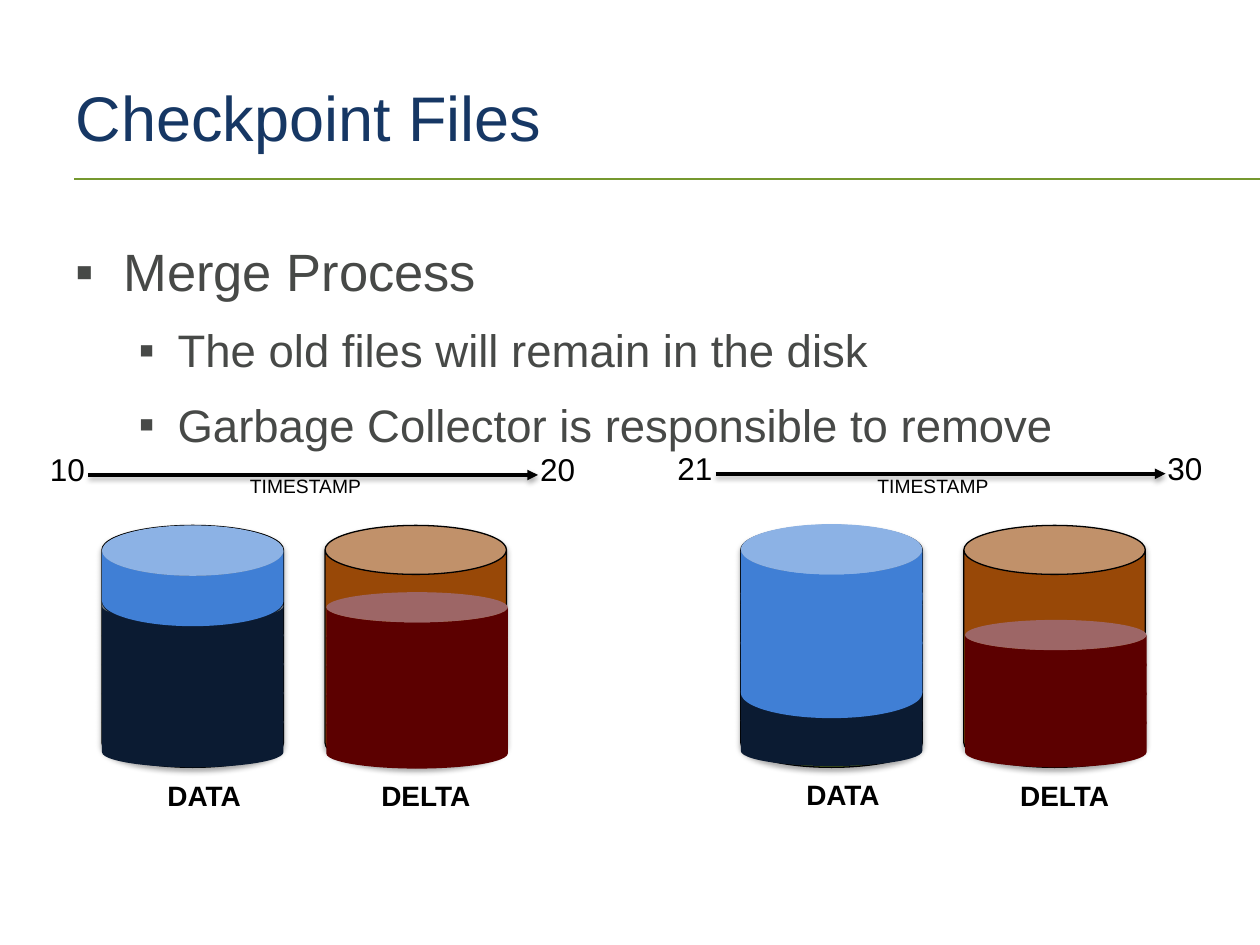
from lxml import etree
from pptx import Presentation
from pptx.dml.color import RGBColor
from pptx.enum.shapes import MSO_CONNECTOR, MSO_SHAPE
from pptx.enum.text import MSO_ANCHOR, MSO_AUTO_SIZE, PP_ALIGN
from pptx.oxml.ns import qn
from pptx.util import Inches, Pt

CAN = MSO_SHAPE.CAN
STRAIGHT = MSO_CONNECTOR.STRAIGHT
LEFT, CENTER = PP_ALIGN.LEFT, PP_ALIGN.CENTER
TOP, MIDDLE = MSO_ANCHOR.TOP, MSO_ANCHOR.MIDDLE
GROW = MSO_AUTO_SIZE.SHAPE_TO_FIT_TEXT

THEME = {
    "font": "Arial",
    "color": {name: RGBColor.from_string(value) for name, value in {
        "title": "163764", "body": "474947", "rule": "75982F", "black": "000000",
        "data_can": "587223", "delta_can": "984807",
        "data_rows": "0B1B32", "delta_rows": "5C0000", "deleted": "407FD5",
    }.items()},
    "size": {"title": Pt(36), "body": (Pt(30), Pt(26)), "file": Pt(16),
             "stamp": Pt(18), "axis": Pt(11)},
}
COLOR, SIZE = THEME["color"], THEME["size"]

LABEL_FRAME = {
    "margin_left": Inches(0.24), "margin_right": Inches(0.24),
    "margin_top": Inches(0.19), "margin_bottom": Inches(0.19),
    "auto_size": GROW,
}
LABEL_PARAGRAPH = {"alignment": CENTER, "line_spacing": 0.9, "space_after": Pt(7.3)}


def add_label(shapes, text, left, top, width, height, size, bold=False, wrap=True):
    label = shapes.add_textbox(Inches(left), Inches(top), Inches(width), Inches(height))
    frame = label.text_frame
    paragraph = frame.paragraphs[0]
    paragraph.text = text
    font_format = {"name": THEME["font"], "size": size, "bold": bold}
    for target, values in ((frame, LABEL_FRAME), (paragraph, LABEL_PARAGRAPH),
                           (paragraph.font, font_format)):
        for attribute, value in values.items():
            setattr(target, attribute, value)
    frame.word_wrap = wrap
    paragraph.font.color.rgb = COLOR["black"]


def add_can(shapes, left, top, height, color, curve=0.5, outlined=False):
    can = shapes.add_shape(CAN, Inches(left), Inches(top), Inches(1.44), Inches(height))
    can.adjustments[0] = curve
    can.shadow.inherit = False
    can.fill.solid()
    can.fill.fore_color.rgb = color
    if outlined:
        can.line.color.rgb = COLOR["black"]
        can.line.width = Pt(0.75)
    else:
        can.line.fill.background()
    return can


presentation = Presentation()
presentation.slide_width, presentation.slide_height = Inches(10), Inches(7.5)
slide = presentation.slides.add_slide(presentation.slide_layouts[1])

# Rule under the title
rule = slide.shapes.add_connector(STRAIGHT, Inches(0.59), Inches(1.42), Inches(10), Inches(1.42))
rule.line.color.rgb = COLOR["rule"]
rule.line.width = Pt(1)
etree.SubElement(rule.element.spPr, qn("a:effectLst"))

# Title and bullet list
title, body = slide.shapes.title, slide.placeholders[1]
for holder, top, height, anchor in ((title, 0.3, 1.25, MIDDLE), (body, 1.75, 4.95, TOP)):
    holder.left, holder.top = Inches(0.5), Inches(top)
    holder.width, holder.height = Inches(9), Inches(height)
    holder.text_frame.vertical_anchor = anchor

title.text_frame.text = "Checkpoint Files"
heading = title.text_frame.paragraphs[0]
heading.alignment = LEFT
for attribute, value in {"name": THEME["font"], "size": SIZE["title"]}.items():
    setattr(heading.font, attribute, value)
heading.font.color.rgb = COLOR["title"]

merge_points = [
    (0, "Merge Process"),
    (1, "The old files will remain in the disk"),
    (1, "Garbage Collector is responsible to remove"),
]
indents = [(0.38, -0.38), (0.81, -0.31)]
body.text_frame.text = "\n".join(text for _, text in merge_points)
for point, (level, _) in zip(body.text_frame.paragraphs, merge_points):
    margin, hanging = indents[level]
    properties = point._p.get_or_add_pPr()
    properties.set("marL", str(Inches(margin)))
    properties.set("indent", str(Inches(hanging)))
    etree.SubElement(properties, qn("a:buFont"), typeface=THEME["font"])
    etree.SubElement(properties, qn("a:buChar"), char="▪")
    point.level = level
    point.line_spacing = 1.2
    for attribute, value in {"name": THEME["font"], "size": SIZE["body"][level]}.items():
        setattr(point.font, attribute, value)
    point.font.color.rgb = COLOR["body"]

# Two checkpoint file pairs: a data can and a delta can under a timestamp range
file_pairs = [
    {"left": 0.81, "arrow": 0.7, "arrow_top": 3.77, "range": ("10", "20"),
     "bottom": 5.61, "delta_rows": 5, "deleted_tops": [4.17]},
    {"left": 5.88, "arrow": 5.68, "arrow_top": 3.76, "range": ("21", "30"),
     "bottom": 5.6, "delta_rows": 4, "deleted_tops": [4.9, 4.51, 4.16]},
]
LAYER_STEP, LAYER_HEIGHT = 0.23, 0.48
shadowed = []
for pair in file_pairs:
    data_left = pair["left"]
    delta_left = data_left + 1.77
    cans = slide.shapes.add_group_shape().shapes

    # Outer cans and their names
    for left, color in ((data_left, "data_can"), (delta_left, "delta_can")):
        shadowed.append(add_can(cans, left, 4.17, 1.92, COLOR[color], 0.27, outlined=True))
    add_label(cans, "DATA", data_left + 0.27, pair["bottom"] + 0.48, 1.08, 0.63,
              SIZE["file"], bold=True, wrap=False)
    add_label(cans, "DELTA", delta_left + 0.2, 6.09, 1.2, 0.63,
              SIZE["file"], bold=True, wrap=False)

    # Rows stacked upward, then the deleted rows over the data
    for left, bottom, layers, color in (
            (data_left, pair["bottom"], 5, "data_rows"),
            (delta_left + 0.01, pair["bottom"] + 0.01, pair["delta_rows"], "delta_rows")):
        for layer in range(layers):
            add_can(cans, left, bottom - layer * LAYER_STEP, LAYER_HEIGHT, COLOR[color])
        if color == "data_rows":
            add_can(cans, left, 4.18, 0.8, COLOR[color])
    for top in pair["deleted_tops"]:
        add_can(cans, data_left, top, 0.8, COLOR["deleted"])

    # Timestamp arrow with its range
    start, top = pair["arrow"], pair["arrow_top"]
    arrow = slide.shapes.add_connector(STRAIGHT, Inches(start), Inches(top),
                                       Inches(start + 3.57), Inches(top))
    arrow.line.color.rgb = COLOR["black"]
    arrow.line.width = Pt(2)
    etree.SubElement(arrow.line._get_or_add_ln(), qn("a:tailEnd"), type="triangle")
    etree.SubElement(arrow.element.spPr, qn("a:effectLst"))
    shadowed.append(arrow)
    add_label(slide.shapes, "TIMESTAMP", start + 0.9, 3.7, 1.65, 0.57, SIZE["axis"])
    for stamp, offset in zip(pair["range"], (-0.55, 3.34)):
        add_label(slide.shapes, stamp, start + offset, top - 0.3, 0.77, 0.66, SIZE["stamp"])

# Soft shadow below the outer cans and the arrows
for caster in shadowed:
    effects = caster.element.spPr.find(qn("a:effectLst"))
    shadow = etree.SubElement(effects, qn("a:outerShdw"), blurRad=str(Pt(3.1)),
                              dist=str(Pt(1.8)), dir="5400000", rotWithShape="0")
    shade = etree.SubElement(shadow, qn("a:srgbClr"), val=str(COLOR["black"]))
    etree.SubElement(shade, qn("a:alpha"), val="35000")

presentation.save("out.pptx")
